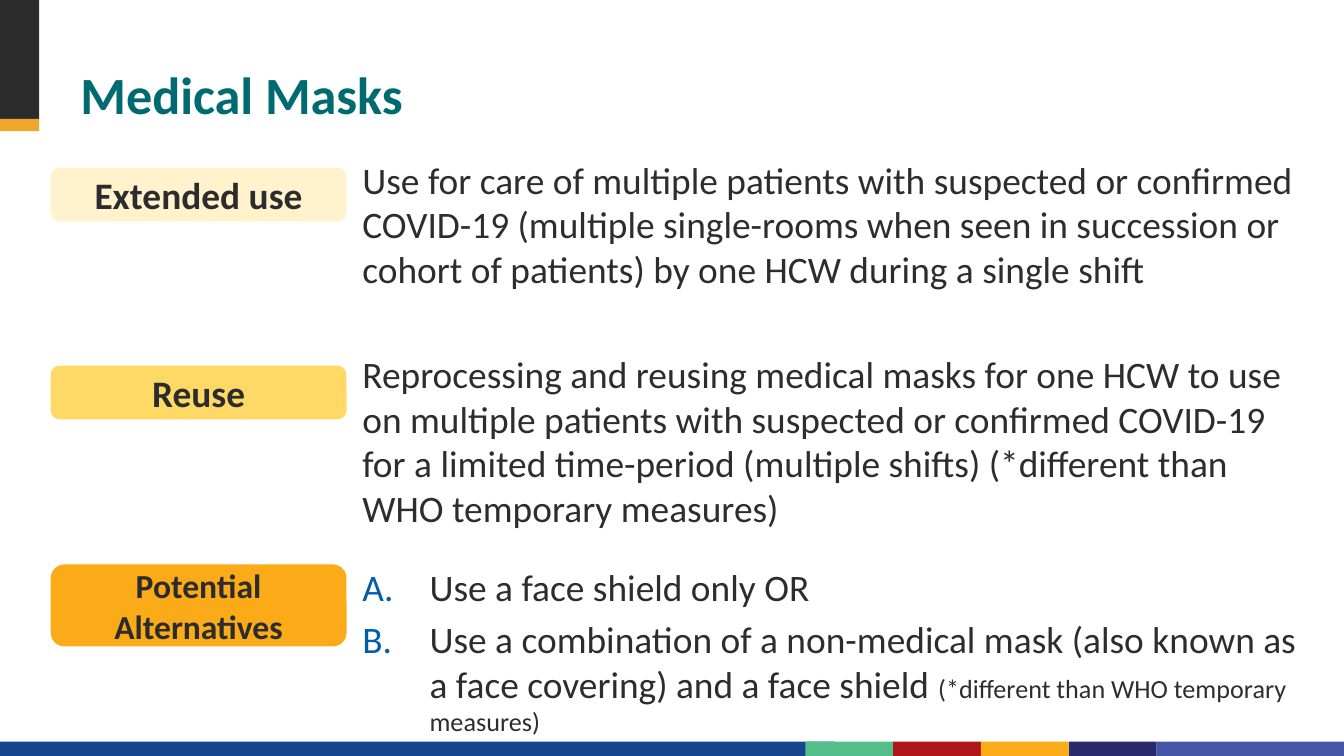
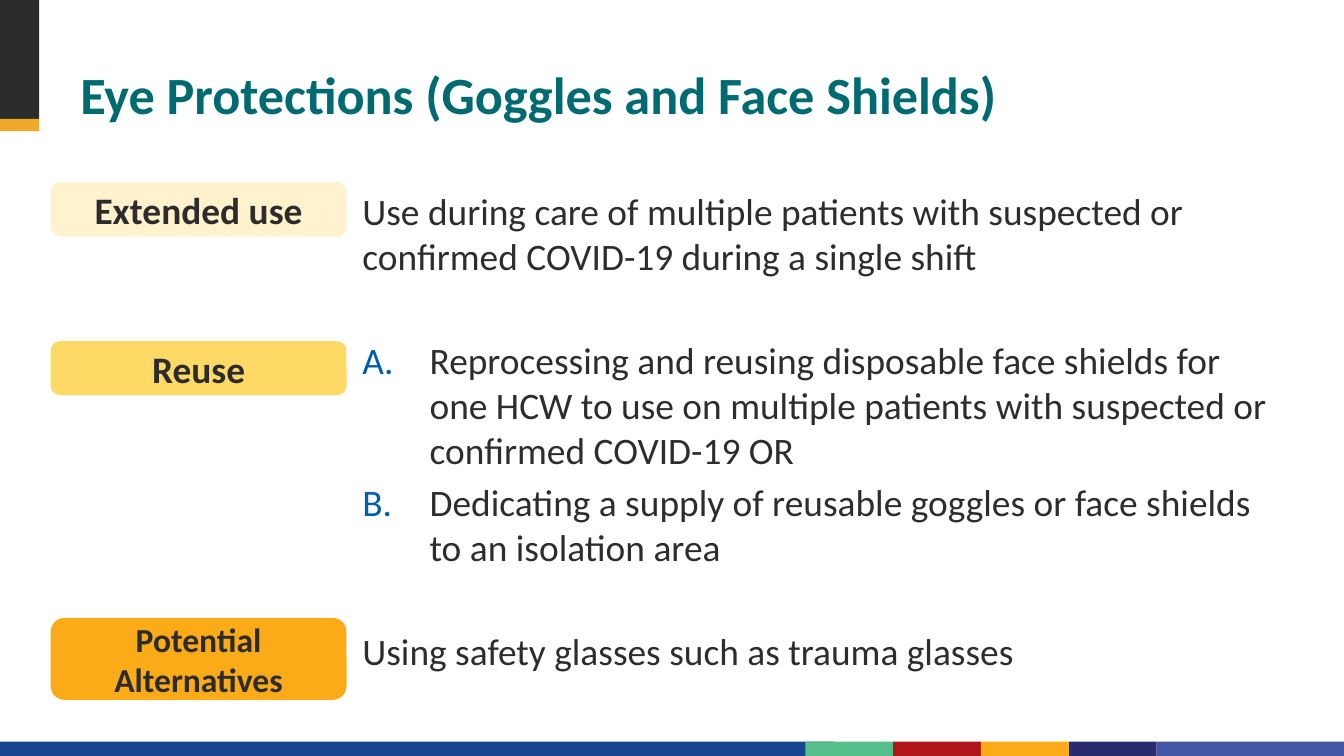
from lxml.etree import SubElement
from pptx import Presentation
from pptx.dml.color import RGBColor
from pptx.enum.shapes import MSO_SHAPE
from pptx.enum.text import MSO_ANCHOR, PP_ALIGN
from pptx.oxml.ns import qn
from pptx.util import Cm, Pt

FONT = "Calibri"
HEX = {
    "title": "006A71", "text": "2D2D2D", "ink": "2D2C2C", "letter": "005DAA",
    "gold": "F0A82C", "cream": "FFF2CC", "yellow": "FFD966", "amber": "FBAB18",
    "blue": "17468F", "green": "55BF8B", "red": "B01519", "navy": "292B6E",
    "violet": "4656A6",
}
# label: (fill, height in cm, text size)
PILLS = {
    "Extended use": ("cream", 1.02, 20),
    "Reuse": ("yellow", 1.02, 20),
    "Potential Alternatives": ("amber", 1.55, 18),
}
# tops: one per pill; lines: (space before in pt, lettered, text, small text)
SLIDES = [
    {
        "title": "Medical Masks",
        "tops": (3.17, 6.91, 10.67),
        "body": (2.84, 18.26),
        "lines": [
            (0, False, "Use for care of multiple patients with suspected or confirmed "
             "COVID-19 (multiple single-rooms when seen in succession or cohort of "
             "patients) by one HCW during a single shift", ""),
            (32, False, "Reprocessing and reusing medical masks for one HCW to use on "
             "multiple patients with suspected or confirmed COVID-19 for a limited "
             "time-period (multiple shifts) (*different than WHO temporary measures)", ""),
            (18, True, "Use a face shield only OR", ""),
            (4, True, "Use a combination of a non-medical mask (also known as a face "
             "covering) and a face shield ", "(*different than WHO temporary measures)"),
        ],
    },
    {
        "title": "Eye Protections (Goggles and Face Shields)",
        "tops": (3.45, 6.45, 11.68),
        "body": (3.43, 17.73),
        "lines": [
            (0, False, "Use during care of multiple patients with suspected or confirmed "
             "COVID-19 during a single shift", ""),
            (32, True, "Reprocessing and reusing disposable face shields for one HCW to "
             "use on multiple patients with suspected or confirmed COVID-19 OR", ""),
            (4, True, "Dedicating a supply of reusable goggles or face shields to an "
             "isolation area", ""),
            (32, False, "Using safety glasses such as trauma glasses", ""),
        ],
    },
]
WIDE, HIGH = 25.4, 14.29
BAND_TOP, BAND_HIGH = 14.02, 0.27
BAND_LEFT, STEP = 15.22, 1.66


def color(name):
    return RGBColor.from_string(HEX[name])


def style(para, size, name, bold=False):
    font = para.font
    font.name, font.size, font.bold = FONT, Pt(size), bold
    font.color.rgb = color(name)


def block(slide, kind, fill, *box):
    shape = slide.shapes.add_shape(kind, *map(Cm, box))
    shape.shadow.inherit = False
    shape.fill.solid()
    shape.fill.fore_color.rgb = color(fill)
    shape.line.fill.background()
    return shape


def text_box(slide, *box):
    frame = slide.shapes.add_textbox(*map(Cm, box)).text_frame
    frame.word_wrap = True
    return frame


def frame_slide(slide):
    """Draw the corner mark and the colour band at the foot."""
    rect = MSO_SHAPE.RECTANGLE
    block(slide, rect, "ink", 0, 0, 0.74, 2.25)
    block(slide, rect, "gold", 0, 2.25, 0.74, 0.23)
    block(slide, rect, "blue", 0, BAND_TOP, 15.77, BAND_HIGH)
    for i, fill in enumerate(("green", "red", "amber", "navy", "violet")):
        left = BAND_LEFT + i * STEP
        width = WIDE - left if fill == "violet" else STEP
        block(slide, rect, fill, left, BAND_TOP, width, BAND_HIGH)


def add_title(slide, text):
    frame = text_box(slide, 1.27, 0.58, 22.86, 1.9)
    frame.vertical_anchor = MSO_ANCHOR.BOTTOM
    para = frame.paragraphs[0]
    para.text = text
    para.line_spacing = Pt(30)
    style(para, 28, "title", True)


def add_letter(para):
    """Number the paragraph A., B., ... with a hanging indent."""
    props = para._p.get_or_add_pPr()
    props.set("marL", str(Cm(1.27)))
    props.set("indent", str(-Cm(1.27)))
    tint = SubElement(props, qn("a:buClr"))
    SubElement(tint, qn("a:srgbClr"), val=HEX["letter"])
    SubElement(props, qn("a:buAutoNum"), type="alphaUcPeriod")


def add_body(slide, top, width, lines):
    frame = text_box(slide, 6.6, top, width, 10.03)
    for i, (gap, letter, text, small) in enumerate(lines):
        para = frame.add_paragraph() if i else frame.paragraphs[0]
        para.space_before = Pt(gap)
        if letter:
            add_letter(para)
        style(para, 20, "text")
        para.add_run().text = text
        if small:
            run = para.add_run()
            run.text = small
            run.font.size = Pt(14)


def add_pill(slide, label, top):
    fill, height, size = PILLS[label]
    pill = block(slide, MSO_SHAPE.ROUNDED_RECTANGLE, fill, 0.96, top, 5.59, height)
    pill.text_frame.word_wrap = True
    para = pill.text_frame.paragraphs[0]
    para.text = label
    para.alignment = PP_ALIGN.CENTER
    style(para, size, "ink", True)


def main():
    deck = Presentation()
    deck.slide_width, deck.slide_height = Cm(WIDE), Cm(HIGH)
    for page in SLIDES:
        slide = deck.slides.add_slide(deck.slide_layouts[6])
        frame_slide(slide)
        add_title(slide, page["title"])
        add_body(slide, *page["body"], page["lines"])
        for label, top in zip(PILLS, page["tops"]):
            add_pill(slide, label, top)
    deck.save("out.pptx")


if __name__ == "__main__":
    main()
